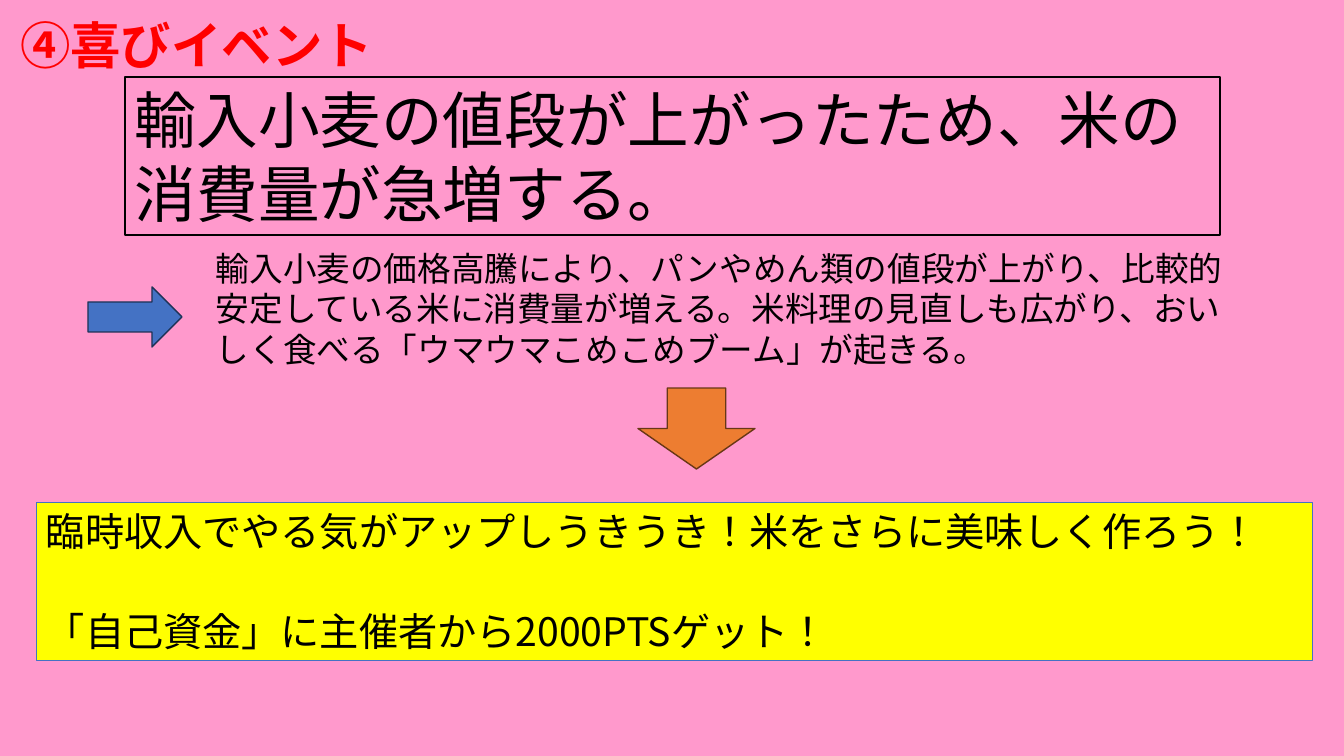
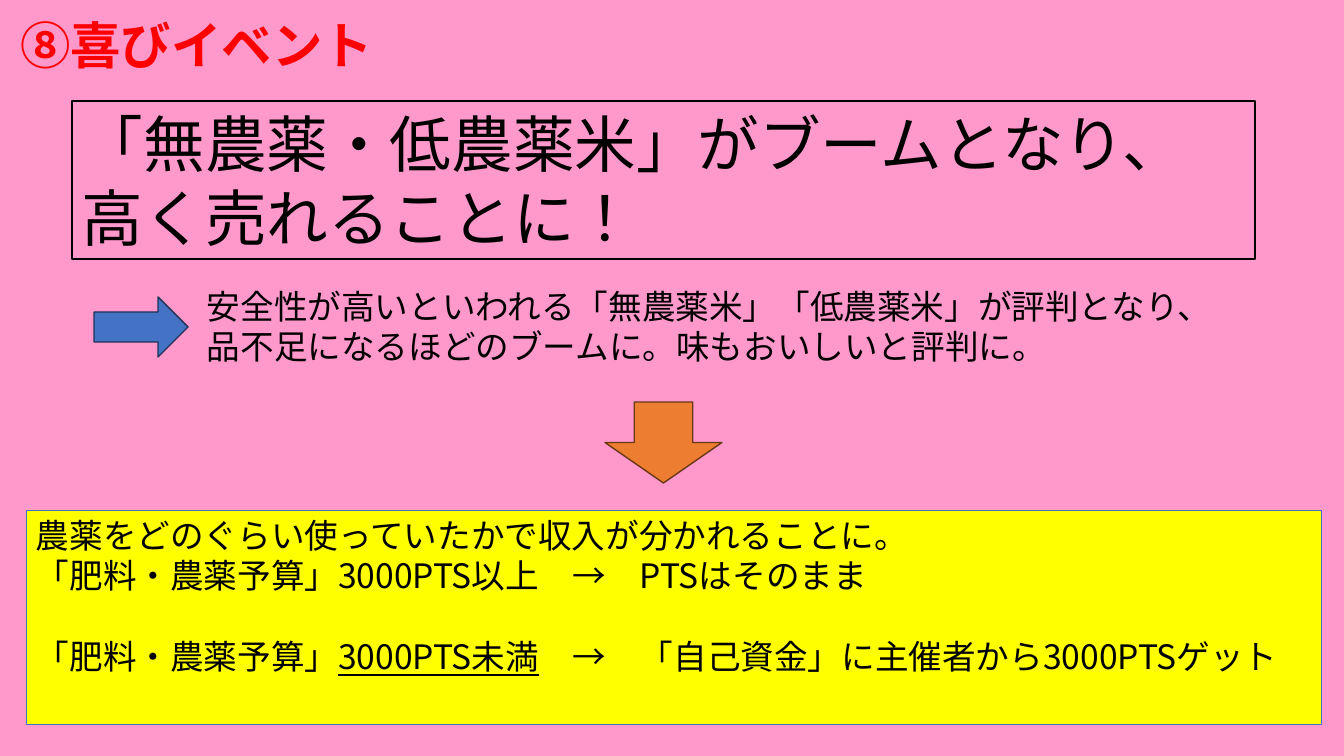
"""Build two event cards: a headline, its explanation and the resulting reward."""
import pptx
import pptx.dml.color
import pptx.enum.lang
import pptx.enum.shapes
import pptx.enum.text
import pptx.oxml
import pptx.oxml.ns
import pptx.util

RGB = pptx.dml.color.RGBColor
SHAPE = pptx.enum.shapes.MSO_SHAPE
ALIGN = pptx.enum.text.PP_ALIGN
ANCHOR = pptx.enum.text.MSO_ANCHOR
Pt = pptx.util.Pt

PINK = RGB(0xFF, 0x99, 0xCC)
RED = RGB(0xFF, 0x00, 0x00)
YELLOW = RGB(0xFF, 0xFF, 0x00)
BLACK = RGB(0x00, 0x00, 0x00)
BLUE = RGB(0x44, 0x72, 0xC4)
NAVY = RGB(0x1E, 0x32, 0x56)
ORANGE = RGB(0xED, 0x7D, 0x31)
BROWN = RGB(0x68, 0x37, 0x15)

FONT = "Noto Sans CJK JP"
WIDTH, HEIGHT = 1344, 756
PX = 914400 / 100.8
TITLE_BOX = (10, 9, 373, 73)
RIGHT_ARROW = (94, 60)
DOWN_ARROW = (117, 81)

STYLES = {
    "title": {"size": Pt(36), "bold": True, "color": RED},
    "headline": {"size": Pt(44), "color": BLACK},
    "detail": {"size": Pt(24), "color": BLACK},
}

EVENTS = [
    {
        "title": "④喜びイベント",
        "headline": ("輸入小麦の値段が上がったため、米の消費量が急増する。", (125, 77, 1095, 158)),
        "detail": (
            "輸入小麦の価格高騰により、パンやめん類の値段が上がり、比較的安定している米に"
            "消費量が増える。米料理の見直しも広がり、おいしく食べる「ウマウマこめこめブーム」が起きる。",
            (206, 243, 1035, 133),
        ),
        "right_arrow": (88, 287),
        "down_arrow": (638, 388),
        "reward_box": (36, 502, 1276, 158),
        "reward_size": 28,
        "reward": [
            (0, [("臨時収入でやる気がアップしうきうき！米をさらに美味しく作ろう！", False)]),
            (38, [("「自己資金」に主催者から2000PTSゲット！", False)]),
        ],
    },
    {
        "title": "⑧喜びイベント",
        "headline": ("「無農薬・低農薬米」がブームとなり、高く売れることに！", (72, 101, 1183, 158)),
        "detail": (
            "安全性が高いといわれる「無農薬米」「低農薬米」が評判となり、"
            "品不足になるほどのブームに。味もおいしいと評判に。",
            (197, 281, 1035, 93),
        ),
        "right_arrow": (94, 297),
        "down_arrow": (605, 402),
        "reward_box": (26, 510, 1295, 214),
        "reward_size": 24,
        "reward": [
            (0, [("農薬をどのぐらい使っていたかで収入が分かれることに。", False)]),
            (0, [("「肥料・農薬予算」3000PTS以上　→　PTSはそのまま", False)]),
            (29, [
                ("「肥料・農薬予算」", False),
                ("3000PTS未満", True),
                ("　→　「自己資金」に主催者から3000PTSゲット", False),
            ]),
        ],
    },
]


def emu(box):
    return [round(v * PX) for v in box]


def set_font(r, style):
    values = {"name": FONT, "language_id": pptx.enum.lang.MSO_LANGUAGE_ID.JAPANESE, **style}
    color = values.pop("color")
    for name, value in values.items():
        setattr(r.font, name, value)
    r.font.color.rgb = color
    ea = pptx.oxml.parse_xml(f'<a:ea {pptx.oxml.ns.nsdecls("a")} typeface="{FONT}"/>')
    r.font._element.find(pptx.oxml.ns.qn("a:latin")).addnext(ea)


def write(sp, paragraphs, style, align=ALIGN.LEFT, wrap=True):
    tf = sp.text_frame
    for name, value in {"word_wrap": wrap, "vertical_anchor": ANCHOR.TOP}.items():
        setattr(tf, name, value)
    for i, (gap, runs) in enumerate(paragraphs):
        p = tf.add_paragraph() if i else tf.paragraphs[0]
        p.alignment = align
        if gap:
            p.space_before = Pt(gap)
        for text, underline in runs:
            r = p.add_run()
            r.text = text
            set_font(r, {**style, "underline": underline})


def add_shape(s, kind, box, fill, line, width=1):
    sp = s.shapes.add_shape(kind, *emu(box))
    sp.shadow.inherit = False
    if fill is None:
        sp.fill.background()
    else:
        sp.fill.solid()
        sp.fill.fore_color.rgb = fill
    sp.line.color.rgb = line
    sp.line.width = Pt(width)
    return sp


def add_event(prs, event):
    s = prs.slides.add_slide(prs.slide_layouts[6])
    s.background.fill.solid()
    s.background.fill.fore_color.rgb = PINK

    text, box = event["headline"]
    sp = add_shape(s, SHAPE.RECTANGLE, box, None, BLACK)
    write(sp, [(0, [(text, False)])], STYLES["headline"])

    text, box = event["detail"]
    sp = s.shapes.add_textbox(*emu(box))
    write(sp, [(0, [(text, False)])], STYLES["detail"])

    add_shape(s, SHAPE.RIGHT_ARROW, event["right_arrow"] + RIGHT_ARROW, BLUE, NAVY)
    add_shape(s, SHAPE.DOWN_ARROW, event["down_arrow"] + DOWN_ARROW, ORANGE, BROWN)

    sp = s.shapes.add_textbox(*emu(TITLE_BOX))
    write(sp, [(0, [(event["title"], False)])], STYLES["title"], ALIGN.CENTER, False)

    sp = add_shape(s, SHAPE.RECTANGLE, event["reward_box"], YELLOW, BLUE, 0.5)
    write(sp, event["reward"], {"size": Pt(event["reward_size"]), "color": BLACK})


def main():
    prs = pptx.Presentation()
    prs.slide_width, prs.slide_height = emu((WIDTH, HEIGHT))
    for event in EVENTS:
        add_event(prs, event)
    prs.save("out.pptx")


if __name__ == "__main__":
    main()
